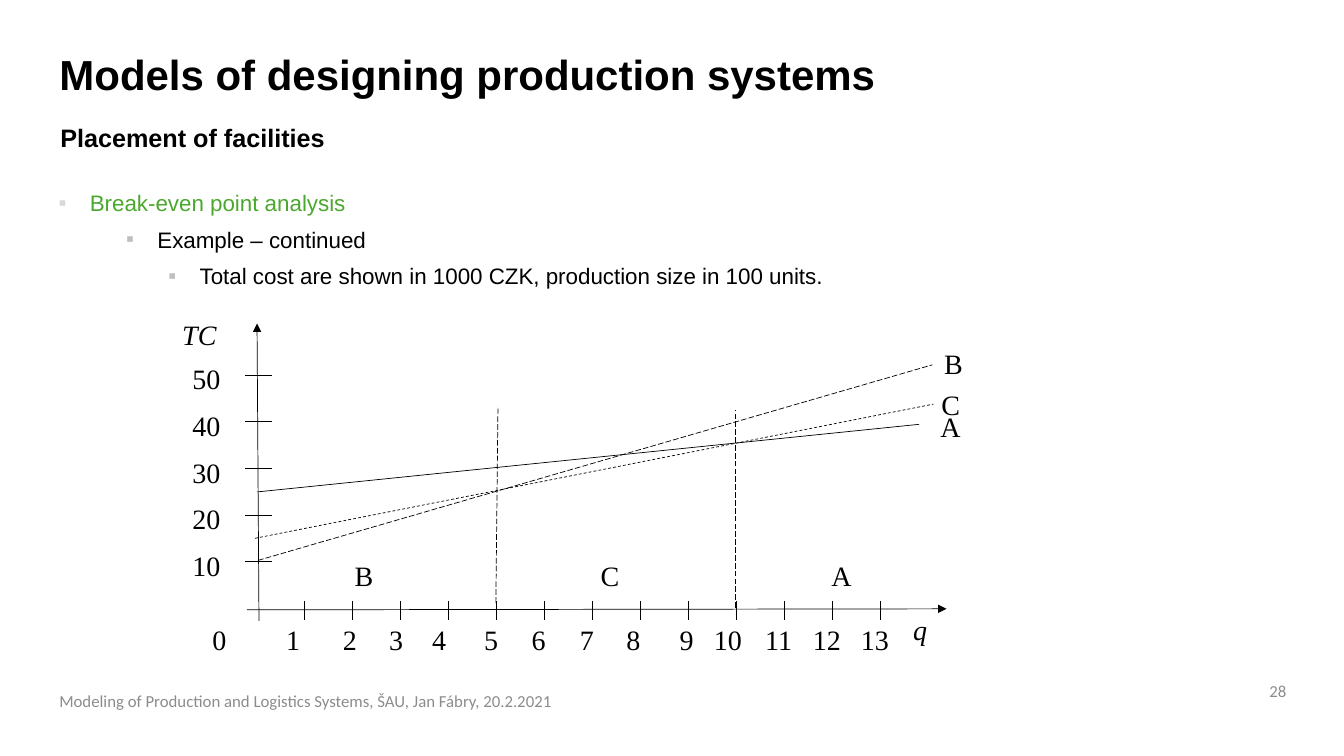
from pptx import Presentation
from pptx.dml.color import RGBColor as RGB
from pptx.enum.dml import MSO_LINE as Dash
from pptx.enum.shapes import MSO_CONNECTOR as Conn
from pptx.enum.text import MSO_ANCHOR as Anchor, MSO_AUTO_SIZE as Fit, PP_ALIGN as Align
from pptx.oxml.ns import qn
from pptx.util import Pt
from lxml.etree import SubElement as Sub

BLACK = RGB(0, 0, 0)
GREEN = RGB(0x4B, 0xA8, 0x2E)
GRAY = RGB(0x8C, 0x8C, 0x8C)
PALE = RGB(0xD9, 0xD9, 0xD9)
SILVER = RGB(0xBF, 0xBF, 0xBF)


class Page:
    sans, serif, small = "Arial", "Times New Roman", "Calibri"

    def __init__(self, slide):
        self.slide = slide
        self.shapes = slide.shapes

    def place(self, shape, left, top, width, height):
        shape.left, shape.top = Pt(left), Pt(top)
        shape.width, shape.height = Pt(width), Pt(height)
        frame = shape.text_frame
        frame.auto_size = Fit.NONE
        frame.word_wrap = True
        frame.vertical_anchor = Anchor.TOP
        return frame

    def style(self, para, face, size, color=BLACK, bold=False, italic=False):
        font = para.font
        font.name, font.size = face, Pt(size)
        font.bold, font.italic = bold, italic
        font.color.rgb = color

    def title(self, text, *box):
        frame = self.place(self.shapes.title, *box)
        frame.text = text
        para = frame.paragraphs[0]
        para.alignment = Align.LEFT
        para.line_spacing = 0.9
        self.style(para, self.sans, 30, bold=True)

    def list(self, items, *box):
        frame = self.place(self.slide.placeholders[1], *box)
        for i, (text, level, left, color, mark) in enumerate(items):
            para = frame.add_paragraph() if i else frame.paragraphs[0]
            para.text = text
            para.level = level
            props = para._p.get_or_add_pPr()
            props.set("marL", str(Pt(left)))
            props.set("indent", str(Pt(-22.3)))
            Sub(Sub(props, qn("a:buClr")), qn("a:srgbClr"), val=str(mark))
            Sub(props, qn("a:buFont"), typeface=self.sans)
            Sub(props, qn("a:buChar"), char="▪")
            para.line_spacing = 1.1
            para.space_before = Pt(5 if i else 0)
            self.style(para, self.sans, 16, color)

    def text(self, text, box, face, size, align=Align.LEFT, anchor=Anchor.TOP,
             wrap=True, **look):
        frame = self.place(self.shapes.add_textbox(0, 0, 0, 0), *box)
        frame.word_wrap = wrap
        frame.vertical_anchor = anchor
        frame.text = text
        para = frame.paragraphs[0]
        para.alignment = align
        self.style(para, face, size, **look)

    def label(self, text, left, top, italic=False):
        self.text(text, (left, top, 52, 24.5), self.serif, 20, italic=italic)

    def line(self, x1, y1, x2, y2, dash=None, arrow=False):
        line = self.shapes.add_connector(Conn.STRAIGHT, Pt(x1), Pt(y1), Pt(x2), Pt(y2))
        line.line.color.rgb = BLACK
        line.line.width = Pt(0.5)
        if dash:
            line.line.dash_style = dash
        if arrow:
            Sub(line.line._get_or_add_ln(), qn("a:tailEnd"), type="triangle")
        Sub(line._element.spPr, qn("a:effectLst"))


def main():
    deck = Presentation()
    deck.slide_width, deck.slide_height = Pt(960), Pt(540)
    page = Page(deck.slides.add_slide(deck.slide_layouts[1]))

    page.title("Models of designing production systems", 35.3, 35.3, 729.4, 41)
    page.text("Placement of facilities", (36, 84.2, 728, 28.8), page.sans, 18, bold=True)
    page.list([
        ("Break-even point analysis", 0, 22.3, GREEN, PALE),
        ("Example – continued", 1, 70.6, BLACK, SILVER),
        ("Total cost are shown in 1000 CZK, production size in 100 units.",
         1, 100.8, BLACK, SILVER),
    ], 34.6, 129.6, 891.4, 344.2)

    page.line(176.4, 435.6, 676.1, 434.9, arrow=True)
    page.line(185, 443.5, 183.6, 231.1, arrow=True)
    page.label("TC", 123.1, 223.2, italic=True)
    page.label("q", 645.1, 434.2, italic=True)

    for cost in range(10, 60, 10):
        y = 434.4 - 3.33 * cost
        page.line(175, y, 194, y)
        page.label(str(cost), 130.3, y - 13)

    lefts = [144.7, 197.3, 237.8, 270.9, 301.7, 338.8, 372.6, 407.2,
             440.3, 478.4, 502.9, 539.4, 573.5, 607.8]
    for unit, left in enumerate(lefts):
        page.label(str(unit), left, 441)
        if unit:
            x = 183.2 + 34.26 * unit
            page.line(x, 429.5, x, 442.6)

    page.line(184.3, 400.3, 666, 260.6, Dash.LONG_DASH)
    page.line(182.2, 384.5, 666.7, 288.7, Dash.DASH)
    page.line(183.6, 351.4, 656.6, 303.1)
    page.line(354.2, 430.6, 355.7, 290.2, Dash.LONG_DASH)
    page.line(525.6, 434.2, 525.6, 293, Dash.LONG_DASH)

    for name, left, top in [("B", 667.4, 244.1), ("C", 665.3, 273.6), ("A", 664.6, 288.7),
                            ("B", 246.2, 395.3), ("C", 421.9, 395.3), ("A", 586.8, 395.3)]:
        page.label(name, left, top)

    page.text("Modeling of Production and Logistics Systems, ŠAU, Jan Fábry, 20.2.2021",
              (35.3, 486, 516.2, 28.8), page.small, 12, anchor=Anchor.MIDDLE, color=GRAY)
    page.text("28", (900.7, 481.7, 25.2, 23.8), page.small, 12, Align.RIGHT,
              Anchor.MIDDLE, False, color=GRAY)

    deck.save("out.pptx")


if __name__ == "__main__":
    main()
